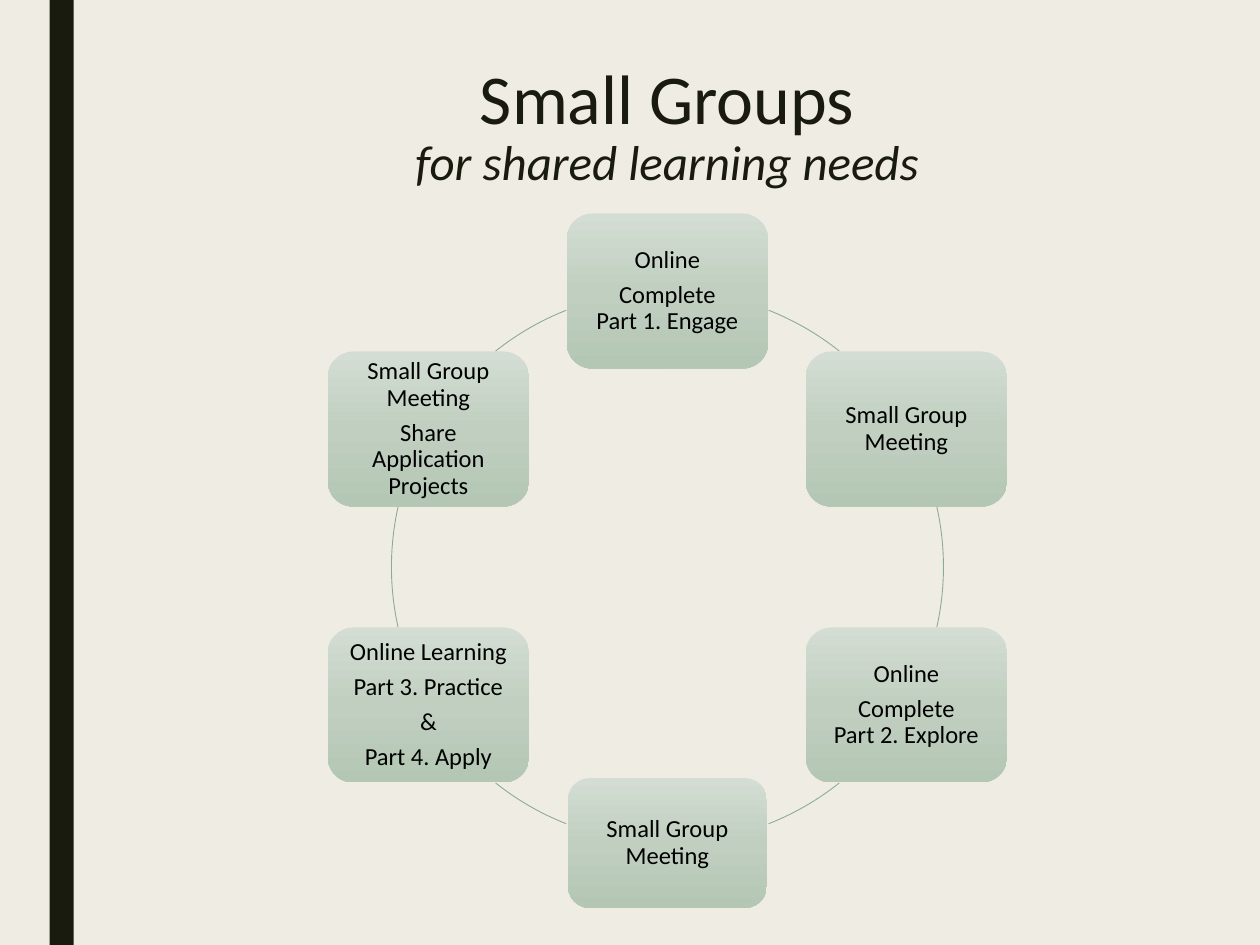
from copy import deepcopy
from math import cos, radians, sin

from pptx import Presentation
from pptx.dml.color import RGBColor
from pptx.enum import shapes, text
from pptx.oxml.ns import qn
from pptx.util import Pt

FONT, DARK, BLACK, PAPER, LINE = "Calibri", "191B0E", "000000", "EFEDE3", "8DAB8E"
GRADIENT = [(0, "D3DDD3"), (0.5, "C0CFC0"), (1, "B4C7B5")]
CX, CY, RADIUS = 381.4, 324, 157.7
BOX, LAST_BOX = (115.2, 88.6), (113.6, 74.2)
STEP = 60

# Clockwise from the top: box size and paragraphs (\v breaks a line)
STAGES = [
    (BOX, ["Online", "Complete\vPart 1. Engage"]),
    (BOX, ["Small Group Meeting"]),
    (BOX, ["Online", "Complete\vPart 2. Explore"]),
    (LAST_BOX, ["Small Group Meeting"]),
    (BOX, ["Online Learning", "Part 3. Practice", "&", "Part 4. Apply"]),
    (BOX, ["Small Group Meeting", "Share Application Projects"]),
]
# Half the angle of each arc that shows between two boxes
HALF_SPANS = [8.5, 12.6, 8.5] * 2


def color(value):
    return RGBColor.from_string(value)


def set_all(obj, values):
    for name, value in values.items():
        setattr(obj, name, value)


def format_frame(tf, inset_x, inset_y):
    set_all(tf, dict(word_wrap=True, vertical_anchor=text.MSO_ANCHOR.MIDDLE,
                     margin_left=Pt(inset_x), margin_right=Pt(inset_x),
                     margin_top=Pt(inset_y), margin_bottom=Pt(inset_y)))


def format_run(r, size, hex_color, italic=False):
    set_all(r.font, dict(name=FONT, size=Pt(size), italic=italic))
    r.font.color.rgb = color(hex_color)


def add_preset(slide, kind, left, top, width, height):
    sp = slide.shapes.add_shape(kind, Pt(left), Pt(top), Pt(width), Pt(height))
    sp.shadow.inherit = False
    return sp


def add_sidebar(slide):
    sp = add_preset(slide, shapes.MSO_SHAPE.RECTANGLE, 28.4, 0, 13.7, 540)
    sp.fill.solid()
    sp.fill.fore_color.rgb = color(DARK)
    sp.line.fill.background()


def add_title(slide):
    sp = slide.shapes.add_textbox(Pt(42.2), Pt(18), Pt(677.8), Pt(110.2))
    format_frame(sp.text_frame, 7.2, 3.6)
    p = sp.text_frame.paragraphs[0]
    set_all(p, dict(alignment=text.PP_ALIGN.CENTER, line_spacing=0.89))
    r = p.add_run()
    r.text = "Small Groups"
    format_run(r, 40, DARK)
    p.add_line_break()
    r = p.add_run()
    r.text = "for shared learning needs"
    format_run(r, 28, DARK, italic=True)


def fill_gradient(sp):
    """Fill from top to bottom with the three GRADIENT stops."""
    sp.fill.gradient()
    sp.fill.gradient_angle = 270
    stops = sp._element.spPr.find(qn("a:gradFill")).find(qn("a:gsLst"))
    stops.insert(1, deepcopy(stops[0]))
    for stop, (position, hex_color) in zip(sp.fill.gradient_stops, GRADIENT):
        stop.position = position
        stop.color.rgb = color(hex_color)


def add_stage(slide, angle, size, paragraphs):
    width, height = size
    x = CX + RADIUS * cos(radians(angle))
    y = CY + RADIUS * sin(radians(angle))
    sp = add_preset(slide, shapes.MSO_SHAPE.ROUNDED_RECTANGLE,
                    x - width / 2, y - height / 2, width, height)
    fill_gradient(sp)
    sp.line.fill.background()
    tf = sp.text_frame
    format_frame(tf, 4.2, 4.2)
    tf.text = "\n".join(paragraphs)
    for p in tf.paragraphs:
        set_all(p, dict(alignment=text.PP_ALIGN.CENTER, line_spacing=0.9,
                        space_after=Pt(4.9)))
        for r in p.runs:
            format_run(r, 14, BLACK)


def add_arc(slide, middle, half_span):
    sp = add_preset(slide, shapes.MSO_SHAPE.ARC, CX - RADIUS, CY - RADIUS,
                    2 * RADIUS, 2 * RADIUS)
    # Adjustments count 100000ths, angles 60000ths of a degree
    for i, angle in enumerate((middle - half_span, middle + half_span)):
        sp.adjustments[i] = angle % 360 * 0.6
    sp.fill.background()
    sp.line.color.rgb = color(LINE)
    sp.line.width = Pt(0.5)


def main():
    prs = Presentation()
    set_all(prs, dict(slide_width=Pt(720), slide_height=Pt(540)))
    slide = prs.slides.add_slide(prs.slide_layouts[6])
    slide.background.fill.solid()
    slide.background.fill.fore_color.rgb = color(PAPER)
    add_sidebar(slide)
    add_title(slide)
    for i, ((size, paragraphs), half_span) in enumerate(zip(STAGES, HALF_SPANS)):
        angle = i * STEP - 90
        add_stage(slide, angle, size, paragraphs)
        add_arc(slide, angle + STEP / 2, half_span)
    prs.save("out.pptx")


if __name__ == "__main__":
    main()
